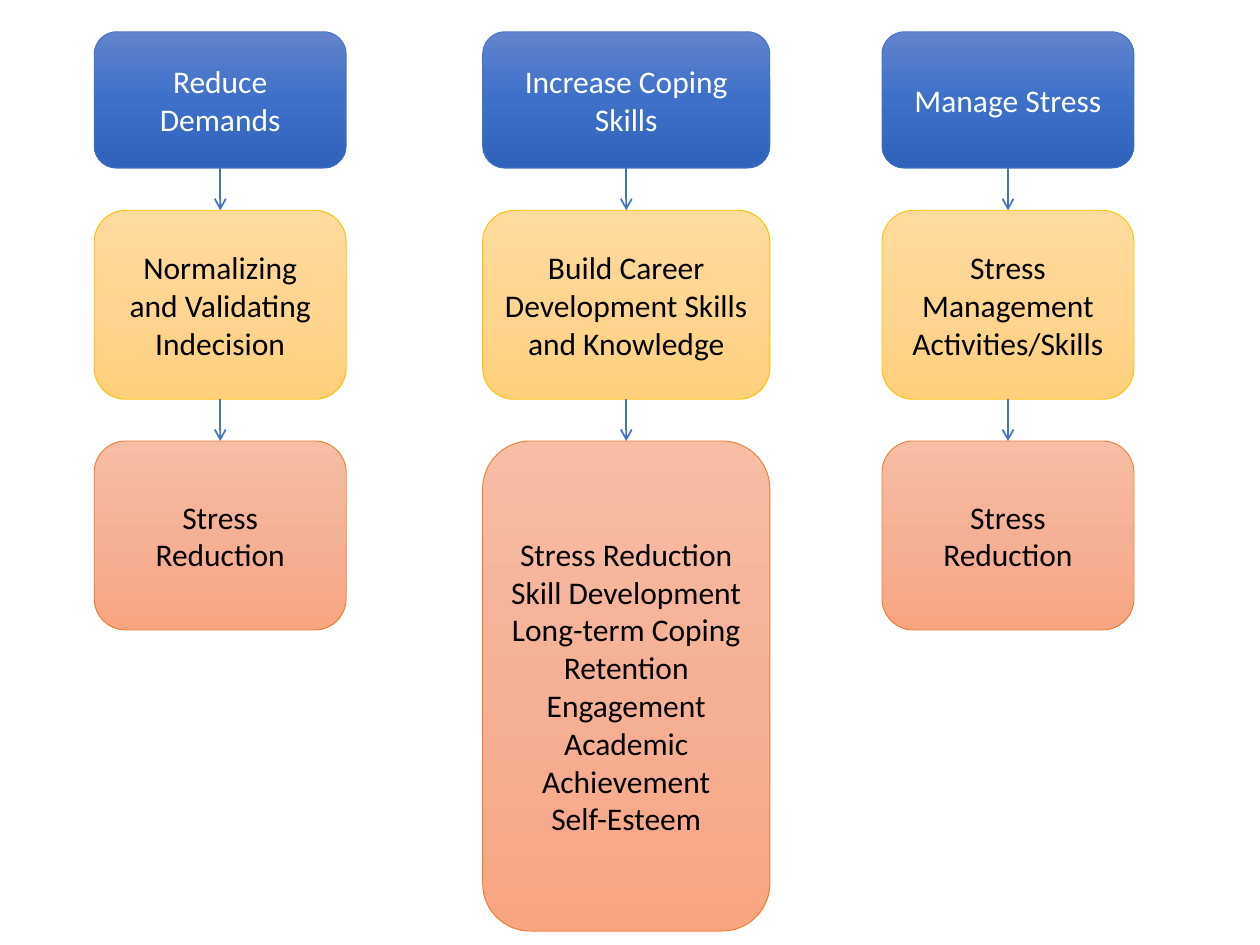
from copy import deepcopy

from lxml.etree import SubElement
from pptx import Presentation
from pptx.dml.color import RGBColor
from pptx.enum.shapes import MSO_CONNECTOR as Connector, MSO_SHAPE as Shape
from pptx.enum.text import MSO_ANCHOR as Anchor, PP_ALIGN as Align
from pptx.oxml.ns import qn
from pptx.util import Cm, Pt

BLANK_LAYOUT = 6
BOTTOM_SITE, TOP_SITE = 2, 0

# Row style: gradient colours, outline, text colour
STRATEGY = (("6183CB", "3E70CA", "3062BB"), "4472C4", "FFFFFF")
ACTION = (("FFDB9E", "FFD590", "FFD07C"), "FFC000", "000000")
OUTCOME = (("F7BDA5", "F5B196", "F8A582"), "ED7D31", "000000")

# Top, height and style of each row
ROWS = [(0.64, 2.75, STRATEGY), (4.24, 3.81, ACTION), (8.89, 3.81, OUTCOME)]
TALL_OUTCOME = 9.88

# Left, width, height of the last box, and one list of paragraphs per row
COLUMNS = [
    (1.9, 5.08, 3.81, [["Reduce Demands"],
                       ["Normalizing and Validating Indecision"],
                       ["Stress Reduction"]]),
    (9.73, 5.79, TALL_OUTCOME, [["Increase Coping Skills"],
                                ["Build Career Development Skills and Knowledge"],
                                ["Stress Reduction", "Skill Development",
                                 "Long-term Coping", "Retention", "Engagement",
                                 "Academic Achievement", "Self-Esteem"]]),
    (17.78, 5.08, 3.81, [["Manage Stress"],
                         ["Stress Management Activities/Skills"],
                         ["Stress Reduction"]]),
]


def color(value):
    return RGBColor.from_string(value)


class FlowSlide:
    font_name = "Calibri"
    font_size = Pt(18)
    arrow_color = "4472C4"

    def __init__(self, slide):
        self.slide = slide

    def fill_gradient(self, shape, colors):
        """Fill from top to bottom with evenly spaced colours."""
        fill = shape.fill
        fill.gradient()
        fill.gradient_angle = 270
        stop_list = shape._element.spPr.find(".//" + qn("a:gsLst"))
        while len(stop_list) < len(colors):
            stop_list.append(deepcopy(stop_list[0]))
        for index, (stop, value) in enumerate(zip(fill.gradient_stops, colors)):
            stop.position = index / (len(colors) - 1)
            stop.color.rgb = color(value)

    def box(self, left, top, width, height, style, lines):
        colors, outline, text_color = style
        shape = self.slide.shapes.add_shape(
            Shape.FLOWCHART_ALTERNATE_PROCESS,
            Cm(left), Cm(top), Cm(width), Cm(height))
        shape.shadow.inherit = False
        self.fill_gradient(shape, colors)
        shape.line.color.rgb = color(outline)
        shape.line.width = Pt(0.5)

        frame = shape.text_frame
        frame.word_wrap = True
        frame.vertical_anchor = Anchor.MIDDLE
        frame.text = "\n".join(lines)
        for paragraph in frame.paragraphs:
            paragraph.alignment = Align.CENTER
            paragraph.font.name = self.font_name
            paragraph.font.size = self.font_size
            paragraph.font.color.rgb = color(text_color)
        return shape

    def arrow(self, upper, lower):
        connector = self.slide.shapes.add_connector(Connector.STRAIGHT, 0, 0, 0, 0)
        connector.begin_connect(upper, BOTTOM_SITE)
        connector.end_connect(lower, TOP_SITE)
        connector.line.color.rgb = color(self.arrow_color)
        connector.line.width = Pt(1)
        SubElement(connector.line._get_or_add_ln(), qn("a:tailEnd"), type="arrow")
        SubElement(connector._element.spPr, qn("a:effectLst"))


def main():
    presentation = Presentation()
    presentation.slide_width, presentation.slide_height = Cm(25.4), Cm(19.05)
    layout = presentation.slide_layouts[BLANK_LAYOUT]
    flow = FlowSlide(presentation.slides.add_slide(layout))

    for left, width, last_height, texts in COLUMNS:
        boxes = []
        for (top, height, style), lines in zip(ROWS, texts):
            box_height = last_height if style is OUTCOME else height
            boxes.append(flow.box(left, top, width, box_height, style, lines))
        for upper, lower in zip(boxes, boxes[1:]):
            flow.arrow(upper, lower)

    presentation.save("out.pptx")


if __name__ == "__main__":
    main()
